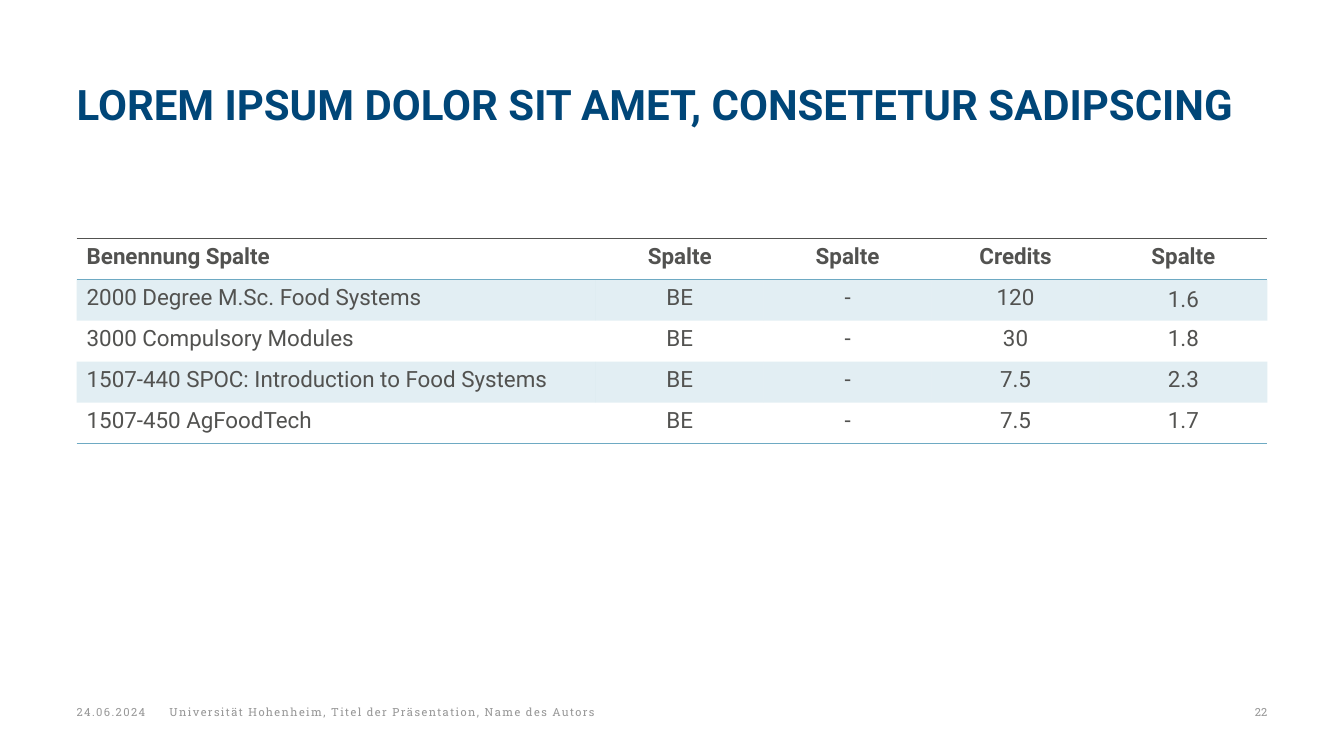
from lxml import etree
from pptx import Presentation
from pptx.dml.color import RGBColor
from pptx.enum.text import MSO_ANCHOR, PP_ALIGN
from pptx.oxml.ns import qn
from pptx.util import Inches, Pt

LEFT, CENTER, RIGHT = PP_ALIGN.LEFT, PP_ALIGN.CENTER, PP_ALIGN.RIGHT
TOP, MIDDLE = MSO_ANCHOR.TOP, MSO_ANCHOR.MIDDLE

COLORS = {
    "title": "004678",
    "text": "525250",
    "accent": "6EAAC3",
    "footer": "989898",
}
BODY_FONT, FOOTER_FONT = "Roboto", "Roboto Slab"
PLAIN_TABLE_STYLE = "{2D5ABB26-0587-4C30-8999-92F81FD0307C}"
MARGIN, CONTENT_WIDTH = 0.76, 11.81
BAND_OPACITY = 20

MODULES = [
    ("Benennung Spalte", "Spalte", "Spalte", "Credits", "Spalte"),
    ("2000 Degree M.Sc. Food Systems", "BE", "-", "120", "1.6"),
    ("3000 Compulsory Modules", "BE", "-", "30", "1.8"),
    ("1507-440 SPOC: Introduction to Food Systems", "BE", "-", "7.5", "2.3"),
    ("1507-450 AgFoodTech", "BE", "-", "7.5", "1.7"),
]


def add_run(paragraph, text, font, size, color, bold=False, spacing=0):
    run = paragraph.add_run()
    run.text = text
    run.font.name = font
    run.font.size = Pt(size)
    run.font.bold = bold
    run.font.color.rgb = RGBColor.from_string(COLORS[color])
    if spacing:
        run.font._element.set("spc", str(spacing * 100))


def add_text(slide, box, text, font, size, color, align=LEFT, anchor=TOP,
             line_spacing=1.0, **style):
    frame = slide.shapes.add_textbox(*map(Inches, box)).text_frame
    frame.word_wrap = True
    frame.vertical_anchor = anchor
    frame.margin_left = frame.margin_right = 0
    frame.margin_top = frame.margin_bottom = 0
    paragraph = frame.paragraphs[0]
    paragraph.alignment = align
    paragraph.line_spacing = line_spacing
    add_run(paragraph, text, font, size, color, **style)


def set_border(cell, side, color, width=1):
    line = etree.Element(qn(f"a:{side}"), w=str(Pt(width)))
    fill = etree.SubElement(line, qn("a:solidFill"))
    etree.SubElement(fill, qn("a:srgbClr"), val=COLORS[color])
    properties = cell._tc.get_or_add_tcPr()
    borders = [child for child in properties if child.tag in (qn("a:lnT"), qn("a:lnB"))]
    properties.insert(len(borders), line)


def shade_band(cell):
    cell.fill.solid()
    cell.fill.fore_color.rgb = RGBColor.from_string(COLORS["accent"])
    tint = cell._tc.tcPr.find(".//" + qn("a:srgbClr"))
    etree.SubElement(tint, qn("a:alpha"), val=str(BAND_OPACITY * 1000))


def add_title(slide, box):
    add_text(slide, box, "LOREM IPSUM DOLOR SIT AMET, CONSETETUR SADIPSCING",
             BODY_FONT, 30, "title", line_spacing=0.9, bold=True)


def add_module_table(slide, box):
    left, top, width, height = box
    name_width = 5.15
    value_width = (width - name_width) / (len(MODULES[0]) - 1)
    table = slide.shapes.add_table(
        len(MODULES), len(MODULES[0]), *map(Inches, box)).table
    table._tbl.tblPr.find(qn("a:tableStyleId")).text = PLAIN_TABLE_STYLE
    for index, column in enumerate(table.columns):
        column.width = Inches(value_width if index else name_width)
    for row in table.rows:
        row.height = Inches(height / len(MODULES))

    last_row, last_column = len(MODULES) - 1, len(MODULES[0]) - 1
    for row, values in enumerate(MODULES):
        for column, value in enumerate(values):
            cell = table.cell(row, column)
            paragraph = cell.text_frame.paragraphs[0]
            paragraph.alignment = CENTER if column else LEFT
            add_run(paragraph, value, BODY_FONT, 16, "text", bold=row == 0)
            if row % 2:
                shade_band(cell)
            else:
                cell.fill.background()
            if row == 0:
                set_border(cell, "lnT", "text")
            if row in (0, last_row):
                set_border(cell, "lnB", "accent")
    table.cell(1, last_column).vertical_anchor = MIDDLE


def add_footer(slide, box):
    left, top, width, height = box
    number_width = 0.91
    parts = [
        (left, 0.78, "24.06.2024", LEFT, 1),
        (left + 0.92, 9.84,
         "Universität Hohenheim, Titel der Präsentation, Name des Autors", LEFT, 1),
        (left + width - number_width, number_width, "22", RIGHT, 0),
    ]
    for part_left, part_width, text, align, spacing in parts:
        add_text(slide, (part_left, top, part_width, height), text, FOOTER_FONT, 8,
                 "footer", align, MIDDLE, spacing=spacing)


def main():
    deck = Presentation()
    deck.slide_width, deck.slide_height = Inches(13.33), Inches(7.5)
    slide = deck.slides.add_slide(deck.slide_layouts[6])
    add_module_table(slide, (MARGIN, 2.37, CONTENT_WIDTH, 2.03))
    add_title(slide, (MARGIN, 0.84, CONTENT_WIDTH, 1.14))
    add_footer(slide, (MARGIN, 6.76, CONTENT_WIDTH, 0.6))
    deck.save("out.pptx")


if __name__ == "__main__":
    main()
